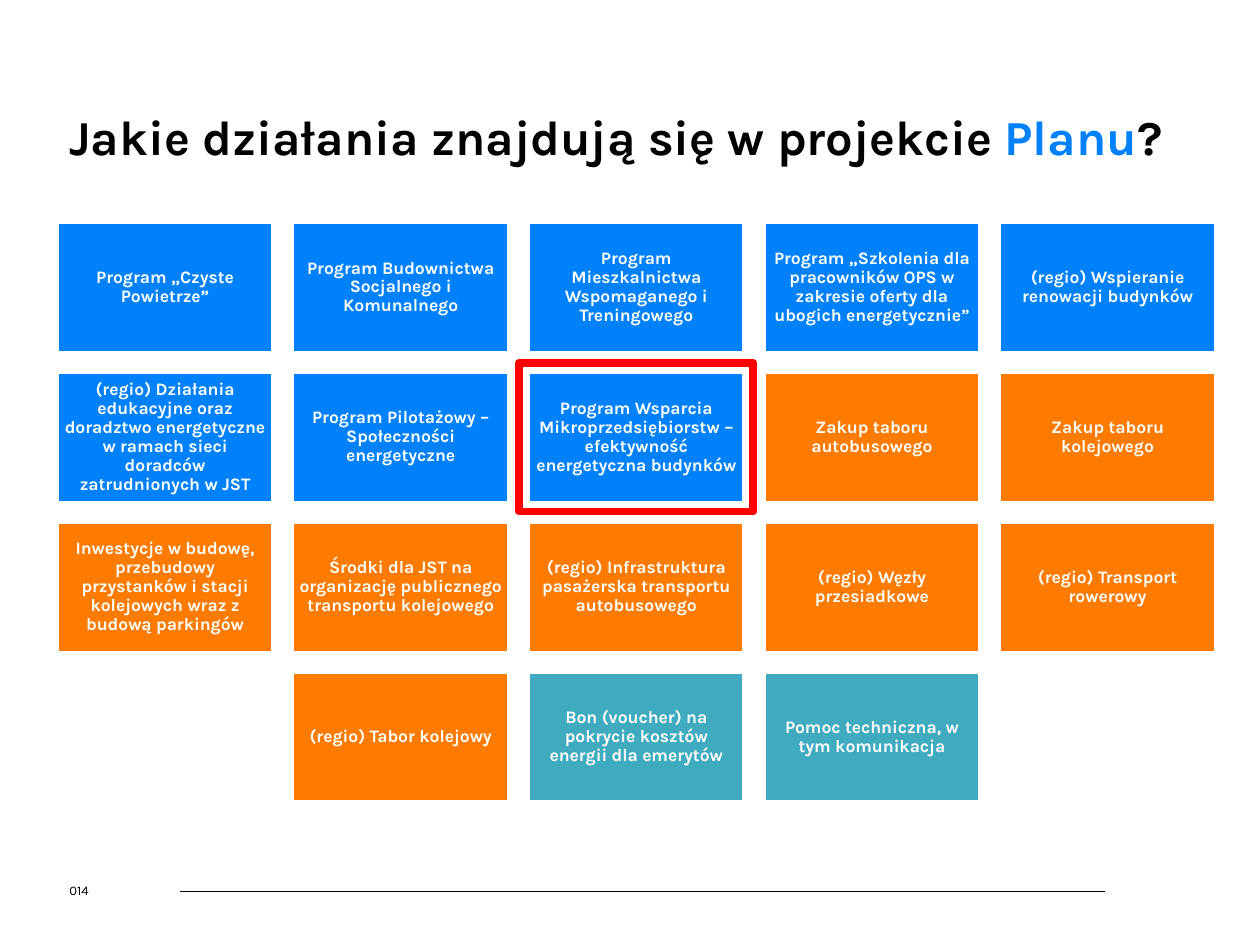
from pptx import Presentation
from pptx.dml.color import RGBColor
from pptx.enum.shapes import MSO_CONNECTOR, MSO_SHAPE
from pptx.enum.text import MSO_ANCHOR, PP_ALIGN
from pptx.oxml.ns import qn
from pptx.util import Inches, Pt
from lxml.etree import SubElement

# Content: title runs and rows of (programme, theme colour)
TITLE = [
    ("Jakie działania znajdują się w projekcie ", "ink"),
    ("Planu", "buildings"),
    ("?", "ink"),
]
PAGE_NUMBER = "014"
PROGRAMMES = [
    [
        ("Program „Czyste Powietrze”", "buildings"),
        ("Program Budownictwa Socjalnego i Komunalnego", "buildings"),
        ("Program Mieszkalnictwa Wspomaganego i Treningowego", "buildings"),
        ("Program „Szkolenia dla pracowników OPS w zakresie oferty dla "
         "ubogich energetycznie”", "buildings"),
        ("(regio) Wspieranie renowacji budynków", "buildings"),
    ],
    [
        ("(regio) Działania edukacyjne oraz doradztwo energetyczne w ramach "
         "sieci doradców zatrudnionych w JST", "buildings"),
        ("Program Pilotażowy – Społeczności energetyczne", "buildings"),
        ("Program Wsparcia Mikroprzedsiębiorstw – efektywność energetyczna "
         "budynków", "buildings"),
        ("Zakup taboru autobusowego", "transport"),
        ("Zakup taboru kolejowego", "transport"),
    ],
    [
        ("Inwestycje w budowę, przebudowy przystanków i stacji kolejowych "
         "wraz z budową parkingów", "transport"),
        ("Środki dla JST na organizację publicznego transportu kolejowego",
         "transport"),
        ("(regio) Infrastruktura pasażerska transportu autobusowego",
         "transport"),
        ("(regio) Węzły przesiadkowe", "transport"),
        ("(regio) Transport rowerowy", "transport"),
    ],
    [
        ("(regio) Tabor kolejowy", "transport"),
        ("Bon (voucher) na pokrycie kosztów energii dla emerytów", "support"),
        ("Pomoc techniczna, w tym komunikacja", "support"),
    ],
]
HIGHLIGHT = (1, 2)  # row and column of the framed programme

THEME = {
    "font": "Karla",
    "title": 27.9, "tile": 10, "page": 7.5,
    "ink": "000000", "paper": "FFFFFF", "highlight": "FF0000",
    "buildings": "0081FC", "transport": "FC7B00", "support": "40AABF",
}

# Grid: every row is centred on the same axis
CENTRE_X, GRID_TOP = 5.05, 1.77
TILE_W, TILE_H, GAP = 1.7, 1.02, 0.17
FRAME_MARGIN = 0.08


def colour(name):
    return RGBColor.from_string(THEME[name])


def add_run(paragraph, text, size, ink, bold=False):
    run = paragraph.add_run()
    run.text = text
    run.font.name = THEME["font"]
    run.font.size = Pt(THEME[size])
    run.font.bold = bold
    run.font.color.rgb = colour(ink)


def set_frame(frame, inset, anchor):
    frame.word_wrap = True
    frame.vertical_anchor = anchor
    frame.margin_left = frame.margin_right = Inches(inset)
    frame.margin_top = frame.margin_bottom = Inches(inset)
    return frame.paragraphs[0]


def add_label(slide, box, anchor):
    label = slide.shapes.add_textbox(*map(Inches, box))
    return set_frame(label.text_frame, 0, anchor)


def add_rectangle(slide, box, line, weight):
    rectangle = slide.shapes.add_shape(MSO_SHAPE.RECTANGLE, *map(Inches, box))
    rectangle.shadow.inherit = False
    rectangle.line.color.rgb = colour(line)
    rectangle.line.width = Pt(weight)
    return rectangle


def tile_box(row, column):
    offset = column - (len(PROGRAMMES[row]) - 1) / 2
    left = CENTRE_X + offset * (TILE_W + GAP) - TILE_W / 2
    return left, GRID_TOP + row * (TILE_H + GAP), TILE_W, TILE_H


def main():
    prs = Presentation()
    prs.slide_width, prs.slide_height = Inches(10), Inches(7.5)
    slide = prs.slides.add_slide(prs.slide_layouts[6])

    # Footer rule and page number
    rule = slide.shapes.add_connector(
        MSO_CONNECTOR.STRAIGHT,
        Inches(1.43), Inches(7.07), Inches(8.77), Inches(7.07))
    rule.line.color.rgb = colour("ink")
    rule.line.width = Pt(0.25)
    SubElement(rule._element.spPr, qn("a:effectLst"))
    page = add_label(slide, (0.55, 7.01, 1.25, 0.11), MSO_ANCHOR.MIDDLE)
    add_run(page, PAGE_NUMBER, "page", "ink")

    # Title
    title = add_label(slide, (0.55, 0.9, 9, 0.46), MSO_ANCHOR.TOP)
    title.line_spacing = 0.9
    for text, ink in TITLE:
        add_run(title, text, "title", ink, bold=True)

    # Programme tiles
    for row, programmes in enumerate(PROGRAMMES):
        for column, (programme, area) in enumerate(programmes):
            tile = add_rectangle(slide, tile_box(row, column), "paper", 1)
            tile.fill.solid()
            tile.fill.fore_color.rgb = colour(area)
            caption = set_frame(tile.text_frame, 0.04, MSO_ANCHOR.MIDDLE)
            caption.alignment = PP_ALIGN.CENTER
            caption.line_spacing = 0.9
            add_run(caption, programme, "tile", "paper", bold=True)

    # Frame around the highlighted programme
    left, top, width, height = tile_box(*HIGHLIGHT)
    frame_box = (left - FRAME_MARGIN, top - FRAME_MARGIN,
                 width + 2 * FRAME_MARGIN, height + 2 * FRAME_MARGIN)
    add_rectangle(slide, frame_box, "highlight", 4.5).fill.background()

    prs.save("out.pptx")


if __name__ == "__main__":
    main()
